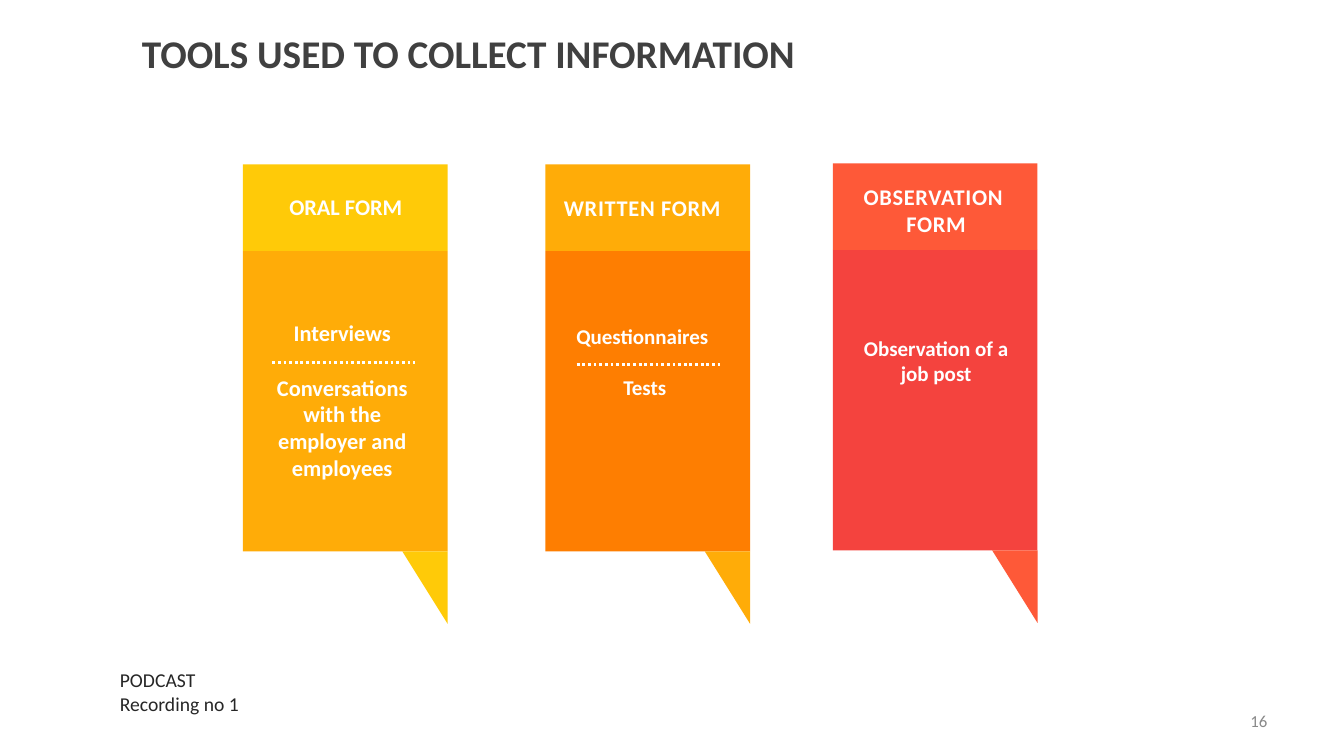
from dataclasses import dataclass

import pptx
import pptx.dml.color
import pptx.enum.dml
import pptx.enum.shapes
import pptx.enum.text
import pptx.oxml
import pptx.oxml.ns
import pptx.util

EMU_PER_PX = 9144  # 100 px to the inch
ALIGN = pptx.enum.text.PP_ALIGN
ANCHOR = pptx.enum.text.MSO_ANCHOR
AUTO_SIZE = pptx.enum.text.MSO_AUTO_SIZE
SHAPE = pptx.enum.shapes.MSO_SHAPE

COLORS = {
    "white": "FFFFFF",
    "title": "404040",
    "note": "262626",
    "number": "898989",
    "yellow": "FFCA08",
    "amber": "FFAC08",
    "orange": "FE7E01",
    "coral": "FE5938",
    "red": "F4433E",
}

# Card geometry
CARD_WIDTH = 203
HEADER_HEIGHT = 86
BODY_HEIGHT = 298
TAIL_WIDTH, TAIL_HEIGHT = 45, 72
DIVIDER_WIDTH = 142


@dataclass(frozen=True)
class Card:
    left: int
    top: int
    header_color: str
    body_color: str


@dataclass(frozen=True)
class Label:
    box: tuple[int, int, int, int]
    lines: tuple[str, ...]
    size: int
    color: str = "white"
    bold: bool = True
    align: ALIGN = ALIGN.CENTER
    anchor: ANCHOR = ANCHOR.TOP
    grow: bool = True
    wrap: bool = False
    gap: float = 0  # points before every line but the first
    tracking: int = 0  # hundredths of a point


@dataclass(frozen=True)
class Divider:
    left: int
    top: int


CARDS = (
    Card(241, 163, "yellow", "amber"),
    Card(541, 163, "amber", "orange"),
    Card(826, 162, "coral", "red"),
)

DIVIDERS = (Divider(270, 360), Divider(572, 362))

LABELS = (
    Label((131, 21, 1095, 62), ("TOOLS USED TO COLLECT INFORMATION",), 28, "title",
          align=ALIGN.LEFT, anchor=ANCHOR.MIDDLE, grow=False, wrap=True),
    Label((956, 695, 311, 40), ("16",), 12, "number", bold=False,
          align=ALIGN.RIGHT, anchor=ANCHOR.MIDDLE, grow=False, wrap=True),
    Label((276, 187, 134, 37), ("ORAL FORM",), 16),
    Label((548, 188, 184, 37), ("WRITTEN FORM ",), 16, tracking=50),
    Label((845, 177, 167, 64), ("OBSERVATION ", "FORM"), 16, tracking=50),
    Label((256, 312, 167, 172),
          ("Interviews", "Conversations with the employer and employees"),
          16, wrap=True, gap=19.5),
    Label((561, 316, 157, 111), ("Questionnaires ", "Tests"), 15, gap=18.3),
    Label((836, 328, 185, 61), ("Observation of a job post",), 15, wrap=True),
    Label((109, 658, 139, 57), ("PODCAST", "Recording no 1"), 14, "note",
          bold=False, align=ALIGN.LEFT),
)


def px(length: int) -> pptx.util.Emu:
    return pptx.util.Emu(length * EMU_PER_PX)


def rgb(name: str) -> pptx.dml.color.RGBColor:
    return pptx.dml.color.RGBColor.from_string(COLORS[name])


def set_attributes(target: object, values: dict) -> None:
    for name, value in values.items():
        setattr(target, name, value)


def add_block(slide, kind: SHAPE, box: tuple[int, int, int, int], color: str,
              rotation: int = 0) -> None:
    shape = slide.shapes.add_shape(kind, *map(px, box))
    shape.rotation = rotation
    shape.shadow.inherit = False
    shape.fill.solid()
    shape.fill.fore_color.rgb = rgb(color)
    shape.line.fill.background()


def add_card(slide, card: Card) -> None:
    body_top = card.top + HEADER_HEIGHT
    tail_left = card.left + CARD_WIDTH - TAIL_WIDTH
    add_block(slide, SHAPE.RECTANGLE,
              (card.left, body_top, CARD_WIDTH, BODY_HEIGHT), card.body_color)
    add_block(slide, SHAPE.RECTANGLE,
              (card.left, card.top, CARD_WIDTH, HEADER_HEIGHT), card.header_color)
    add_block(slide, SHAPE.RIGHT_TRIANGLE,
              (tail_left, body_top + BODY_HEIGHT, TAIL_WIDTH, TAIL_HEIGHT),
              card.header_color, rotation=180)


def add_divider(slide, divider: Divider) -> None:
    connector = slide.shapes.add_connector(
        pptx.enum.shapes.MSO_CONNECTOR.STRAIGHT,
        px(divider.left), px(divider.top),
        px(divider.left + DIVIDER_WIDTH), px(divider.top))
    connector.line.color.rgb = rgb("white")
    set_attributes(connector.line, {
        "width": pptx.util.Pt(2),
        "dash_style": pptx.enum.dml.MSO_LINE.ROUND_DOT,
    })
    # An empty effect list removes the theme shadow
    properties = connector._element.spPr
    properties.append(properties.makeelement(pptx.oxml.ns.qn("a:effectLst"), {}))


def add_label(slide, label: Label) -> None:
    frame = slide.shapes.add_textbox(*map(px, label.box)).text_frame
    set_attributes(frame, {
        "word_wrap": label.wrap,
        "vertical_anchor": label.anchor,
        "auto_size": AUTO_SIZE.SHAPE_TO_FIT_TEXT if label.grow else AUTO_SIZE.NONE,
    })
    for index, line in enumerate(label.lines):
        paragraph = frame.add_paragraph() if index else frame.paragraphs[0]
        paragraph.alignment = label.align
        if index and label.gap:
            paragraph.space_before = pptx.util.Pt(label.gap)
        run = paragraph.add_run()
        run.text = line
        set_attributes(run.font, {
            "name": "Calibri",
            "size": pptx.util.Pt(label.size),
            "bold": label.bold,
        })
        run.font.color.rgb = rgb(label.color)
        if label.tracking:
            run._r.get_or_add_rPr().set("spc", str(label.tracking))


def main() -> None:
    presentation = pptx.Presentation()
    set_attributes(presentation, {"slide_width": px(1333), "slide_height": px(750)})
    slide = presentation.slides.add_slide(presentation.slide_layouts[6])

    # Cards first, then the dotted rules and all text above them
    for card in CARDS:
        add_card(slide, card)
    for divider in DIVIDERS:
        add_divider(slide, divider)
    for label in LABELS:
        add_label(slide, label)

    presentation.save("out.pptx")


if __name__ == "__main__":
    main()
